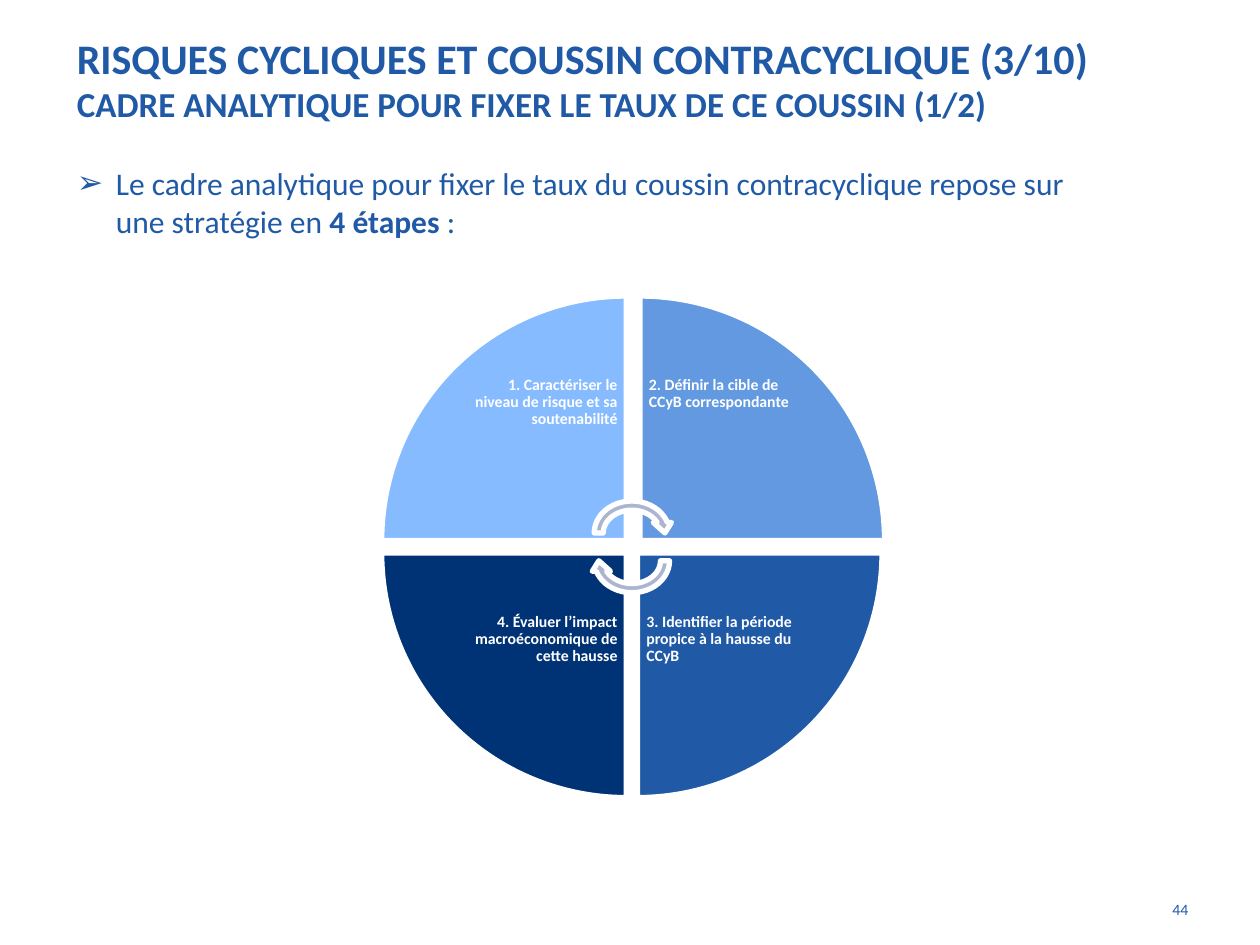
from dataclasses import dataclass

from lxml.etree import SubElement
from pptx import Presentation
from pptx.dml.color import RGBColor
from pptx.enum.shapes import MSO_SHAPE
from pptx.enum.text import MSO_ANCHOR, MSO_AUTO_SIZE, PP_ALIGN
from pptx.oxml.ns import qn
from pptx.util import Inches, Pt


@dataclass(frozen=True)
class Theme:
    font: str = "Calibri"
    blue: str = "205AA7"
    white: str = "FFFFFF"
    arrow: str = "ACB5D0"
    title: int = 24
    subtitle: int = 20
    body: int = 18
    small: int = 9
    outline: int = 3


THEME = Theme()

# Step text, wedge colour, column, row, horizontal nudge; clockwise from top left
STEPS = [
    ("1. Caractériser le niveau de risque et sa soutenabilité", "87BBFF", 0, 0, 0),
    ("2. Définir la cible de CCyB correspondante", "6299E1", 1, 0, 0.02),
    ("3. Identifier la période propice à la hausse du CCyB", THEME.blue, 1, 1, 0),
    ("4. Évaluer l’impact macroéconomique de cette hausse", "003376", 0, 1, 0),
]


def place(part, left, top, width, height):
    part.left, part.top = Inches(left), Inches(top)
    part.width, part.height = Inches(width), Inches(height)


def add_run(paragraph, text, size, color=THEME.blue, bold=False):
    run = paragraph.add_run()
    run.text = text
    run.font.name = THEME.font
    run.font.size = Pt(size)
    run.font.bold = bold
    run.font.color.rgb = RGBColor.from_string(color)


def add_outlined(shapes, preset, box, color, rotation):
    part = shapes.add_shape(preset, *map(Inches, box))
    part.rotation = rotation
    part.shadow.inherit = False
    part.fill.solid()
    part.fill.fore_color.rgb = RGBColor.from_string(color)
    part.line.color.rgb = RGBColor.from_string(THEME.white)
    part.line.width = Pt(THEME.outline)


def fill_heading(heading, box):
    place(heading, *box)
    frame = heading.text_frame
    frame.vertical_anchor = MSO_ANCHOR.MIDDLE
    paragraph = frame.paragraphs[0]
    paragraph.alignment = PP_ALIGN.LEFT
    add_run(paragraph, "RISQUES CYCLIQUES ET COUSSIN CONTRACYCLIQUE (3/10)",
            THEME.title, bold=True)
    paragraph.add_line_break()
    add_run(paragraph, "CADRE ANALYTIQUE POUR FIXER LE TAUX DE CE COUSSIN (1/2)",
            THEME.subtitle, bold=True)


def fill_intro(intro, box):
    place(intro, *box)
    frame = intro.text_frame
    frame.auto_size = MSO_AUTO_SIZE.SHAPE_TO_FIT_TEXT
    paragraph = frame.paragraphs[0]
    paragraph.space_before = Pt(0)
    # Hanging arrow bullet
    properties = paragraph._p.get_or_add_pPr()
    properties.set("marL", str(Inches(0.31)))
    properties.set("indent", str(-Inches(0.31)))
    SubElement(properties, qn("a:buChar")).set("char", "➢")
    add_run(paragraph, "Le cadre analytique pour fixer le taux du coussin "
            "contracyclique repose sur une stratégie en ", THEME.body)
    add_run(paragraph, "4 étapes ", THEME.body, bold=True)
    add_run(paragraph, ":", THEME.body)


def add_step_label(shapes, text, box, alignment, anchor):
    frame = shapes.add_textbox(*map(Inches, box)).text_frame
    frame.word_wrap = True
    frame.vertical_anchor = anchor
    frame.margin_left = frame.margin_right = Inches(0.07)
    frame.margin_top = frame.margin_bottom = Inches(0.07)
    paragraph = frame.paragraphs[0]
    paragraph.alignment = alignment
    paragraph.line_spacing = 0.9
    add_run(paragraph, text, THEME.small, THEME.white, bold=True)


def add_cycle(slide, box):
    left, top, width, height = box
    wedge, label = 1.94, 1.37
    shapes = slide.shapes.add_group_shape().shapes

    # Four wedges, with each label in the corner nearest the centre
    for number, (text, color, column, row, nudge) in enumerate(STEPS):
        x = left + column * (width - wedge) + nudge
        y = top + row * (height - wedge)
        add_outlined(shapes, MSO_SHAPE.PIE_WEDGE, (x, y, wedge, wedge),
                     color, 90 * number)
        label_x = x if column else x + wedge - label
        label_y = y if row else y + wedge - label
        add_step_label(shapes, text, (label_x, label_y, label, label),
                       PP_ALIGN.LEFT if column else PP_ALIGN.RIGHT,
                       MSO_ANCHOR.MIDDLE if row else MSO_ANCHOR.TOP)

    # Two arrows turning around the centre
    arrow_width, arrow_height, shift = 0.67, 0.58, 0.11
    center_x, center_y = left + width / 2, top + height / 2
    for direction, rotation in ((-1, 0), (1, 180)):
        arrow_y = center_y + direction * shift - arrow_height / 2
        add_outlined(shapes, MSO_SHAPE.CIRCULAR_ARROW,
                     (center_x - arrow_width / 2, arrow_y,
                      arrow_width, arrow_height), THEME.arrow, rotation)


def add_page_number(slide, box):
    frame = slide.shapes.add_textbox(*map(Inches, box)).text_frame
    frame.word_wrap = True
    paragraph = frame.paragraphs[0]
    paragraph.alignment = PP_ALIGN.RIGHT
    add_run(paragraph, "44", THEME.small)


def main():
    deck = Presentation()
    deck.slide_width, deck.slide_height = Inches(10), Inches(7.5)
    slide = deck.slides.add_slide(deck.slide_layouts[1])
    fill_heading(slide.shapes.title, (0.51, 0, 9, 1.25))
    fill_intro(slide.placeholders[1], (0.51, 1.25, 8.19, 0.71))
    add_cycle(slide, (3.03, 2.35, 3.97, 3.98))
    add_page_number(slide, (8.94, 7.09, 0.59, 0.39))
    deck.save("out.pptx")


if __name__ == "__main__":
    main()
